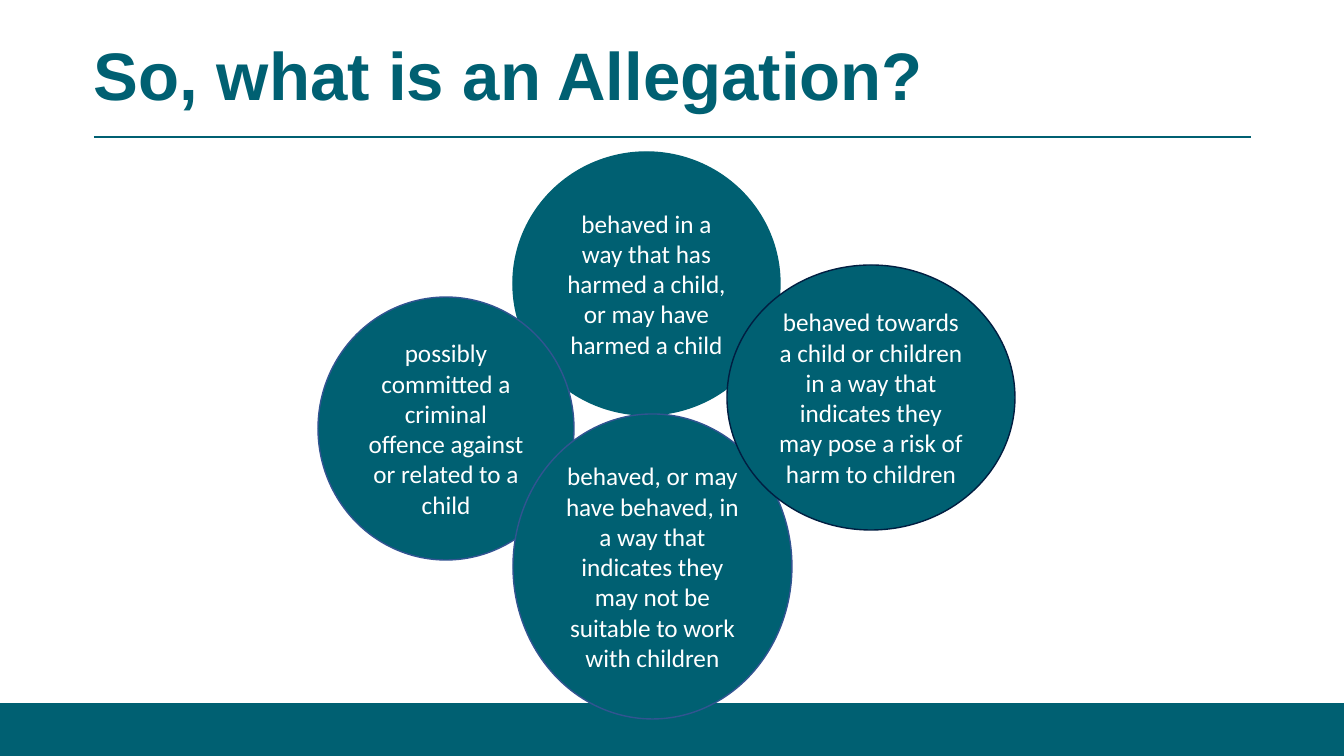
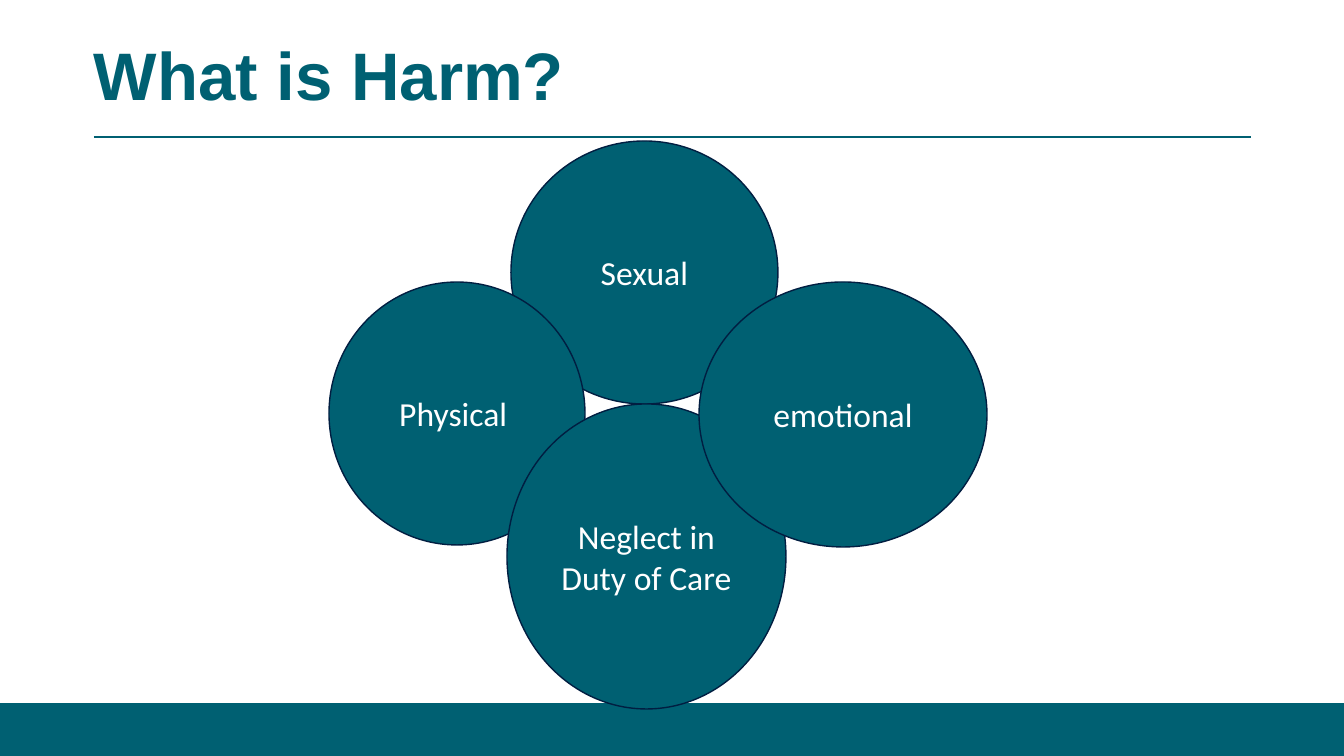
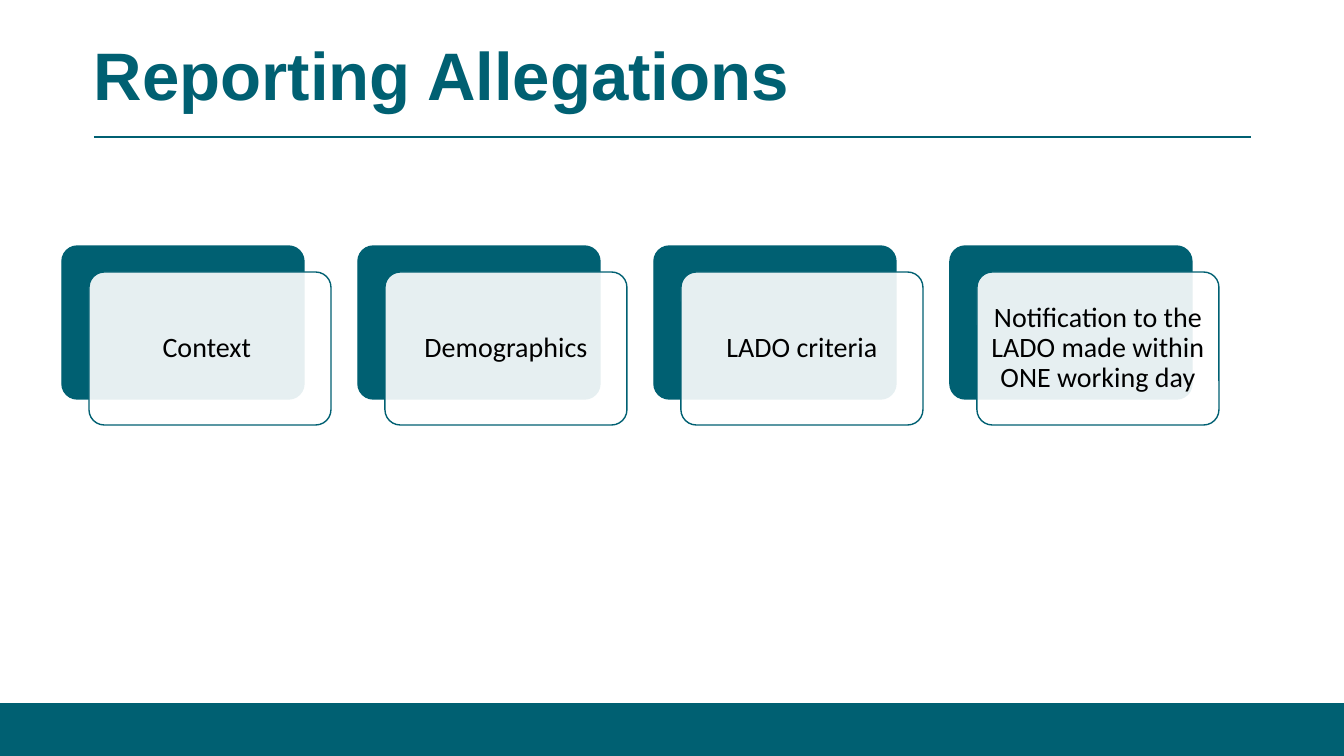
from lxml import etree
from pptx import Presentation
from pptx.dml.color import RGBColor
from pptx.enum.shapes import MSO_CONNECTOR, MSO_SHAPE
from pptx.enum.text import MSO_ANCHOR, MSO_AUTO_SIZE, PP_ALIGN
from pptx.oxml.ns import qn
from pptx.util import Pt

C = {
    "teal": "006072",
    "navy": "011E41",
    "blue": "325491",
    "white": "FFFFFF",
    "black": "000000",
}
SCALE = 12192000 / 1344


def px(*values):
    return [round(v * SCALE) for v in values]


def add_box(s, kind, box, fill, line, text="", size=18, color="white"):
    sp = s.shapes.add_shape(kind, *px(*box))
    sp.shadow.inherit = False
    sp.fill.solid()
    sp.fill.fore_color.rgb = RGBColor.from_string(C[fill])
    sp.line.color.rgb = RGBColor.from_string(C[line])
    sp.line.width = Pt(1)
    if text:
        tf = sp.text_frame
        tf.word_wrap = True
        tf.vertical_anchor = MSO_ANCHOR.MIDDLE
        p = tf.paragraphs[0]
        p.text = text
        p.alignment = PP_ALIGN.CENTER
        p.font.name = "Calibri"
        p.font.size = Pt(size)
        p.font.color.rgb = RGBColor.from_string(C[color])
    return sp


prs = Presentation()
prs.slide_width, prs.slide_height = px(1344, 756)

titles = ["So, what is an Allegation?", "What is Harm?", "Reporting Allegations"]
slides = []
for title in titles:
    s = prs.slides.add_slide(prs.slide_layouts[6])
    slides.append(s)
    rule = s.shapes.add_connector(MSO_CONNECTOR.STRAIGHT, *px(94, 137, 1251, 137))
    rule.line.color.rgb = RGBColor.from_string(C["teal"])
    rule.line.width = Pt(1.5)
    etree.SubElement(rule._element.spPr, qn("a:effectLst"))
    add_box(s, MSO_SHAPE.RECTANGLE, (0, 704, 1344, 59), "teal", "teal")
    tf = s.shapes.add_textbox(*px(84, 28, 1003, 92)).text_frame
    tf.word_wrap = True
    tf.auto_size = MSO_AUTO_SIZE.SHAPE_TO_FIT_TEXT
    p = tf.paragraphs[0]
    p.text = title
    p.font.name = "Arial"
    p.font.size = Pt(48)
    p.font.bold = True
    p.font.color.rgb = RGBColor.from_string(C["teal"])

allegation, harm, reporting = slides

circle_sizes = [(267, 263), (256, 263), (279, 305), (288, 265)]
circle_sets = [
    (allegation, 18, [
        (513, 152, "teal", "behaved in a way that has harmed a child, or may have harmed a child"),
        (318, 297, "blue", "possibly committed a criminal offence against or related to a child"),
        (513, 414, "blue", "behaved, or may have behaved, in a way that indicates they "
                           "may not be suitable to work with children"),
        (727, 265, "navy", "behaved towards a child or children in a way that indicates "
                           "they may pose a risk of harm to children"),
    ]),
    (harm, 24, [
        (511, 141, "navy", "Sexual"),
        (329, 282, "navy", "Physical "),
        (507, 404, "navy", "Neglect in Duty of Care"),
        (699, 282, "navy", "emotional"),
    ]),
]
for s, size, circles in circle_sets:
    for (x, y, line, text), (w, h) in zip(circles, circle_sizes):
        add_box(s, MSO_SHAPE.OVAL, (x, y, w, h), "teal", line, text, size)

steps = [
    "Context ",
    "Demographics",
    "LADO criteria",
    "Notification to the LADO made within ONE working day",
]
for i, step in enumerate(steps):
    x = 62 + 296 * i
    back = add_box(reporting, MSO_SHAPE.ROUNDED_RECTANGLE, (x, 246, 242, 153), "teal", "teal")
    front = add_box(reporting, MSO_SHAPE.ROUNDED_RECTANGLE, (x + 27, 272, 242, 153),
                    "white", "teal", step, 20, "black")
    for card in (back, front):
        card.adjustments[0] = 0.1
    white = front._element.spPr.find(qn("a:solidFill")).find(qn("a:srgbClr"))
    etree.SubElement(white, qn("a:alpha"), val="90000")
    tf = front.text_frame
    tf.margin_left, tf.margin_top, tf.margin_right, tf.margin_bottom = px(8, 8, 8, 8)
    tf.paragraphs[0].line_spacing = 0.9

prs.save("out.pptx")
